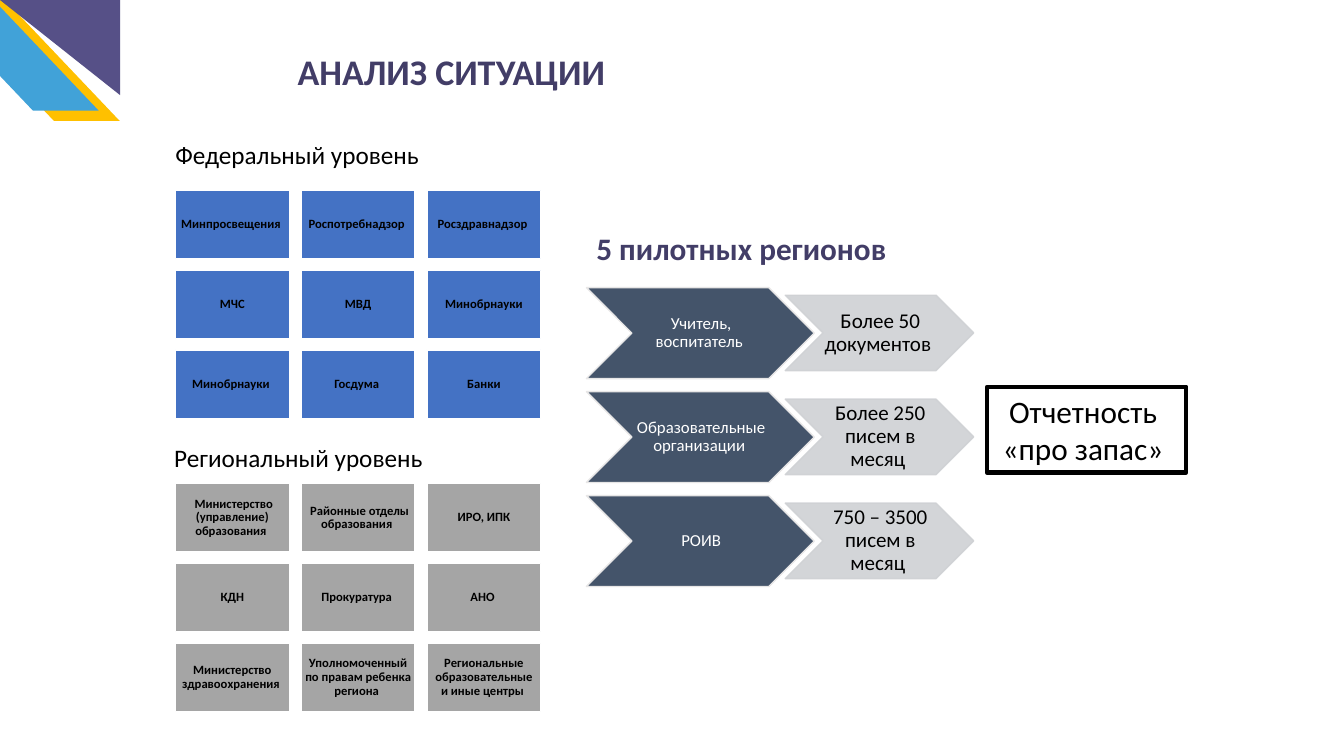
import pptx
import pptx.util
import pptx.dml.color
import pptx.enum.shapes
import pptx.enum.text
import pptx.oxml
import pptx.oxml.ns

Cm = pptx.util.Cm
Pt = pptx.util.Pt
RGBColor = pptx.dml.color.RGBColor
SHAPE = pptx.enum.shapes.MSO_SHAPE
ALIGN = pptx.enum.text.PP_ALIGN
ANCHOR = pptx.enum.text.MSO_ANCHOR
qn = pptx.oxml.ns.qn

FONT = "Calibri"
BLACK = RGBColor(0x00, 0x00, 0x00)
WHITE = RGBColor(0xFF, 0xFF, 0xFF)
PLUM = RGBColor(0x42, 0x3D, 0x67)
VIOLET = RGBColor(0x56, 0x50, 0x87)
AMBER = RGBColor(0xFF, 0xC0, 0x00)
SKY = RGBColor(0x41, 0xA2, 0xD8)
BLUE = RGBColor(0x44, 0x72, 0xC4)
GREY = RGBColor(0xA5, 0xA5, 0xA5)
SLATE = RGBColor(0x44, 0x54, 0x6A)
PALE = RGBColor(0xE7, 0xE6, 0xE6)
SILVER = RGBColor(0xCF, 0xD1, 0xD4)

FEDERAL = [
    ["Минпросвещения ", "Роспотребнадзор ", "Росздравнадзор "],
    ["МЧС", "МВД", "Минобрнауки"],
    ["Минобрнауки ", "Госдума ", "Банки"],
]
REGION = [
    [" Министерство (управление) образования ",
     " Районные отделы образования ", "ИРО, ИПК"],
    ["КДН", "Прокуратура ", "АНО "],
    ["Министерство здравоохранения ",
     "Уполномоченный по правам ребенка региона ",
     "Региональные образовательные и иные центры "],
]
LOADS = [
    ("Учитель, воспитатель ", "Более 50 документов "),
    ("Образовательные организации ", "Более 250 писем в месяц "),
    ("РОИВ", "750 – 3500 писем в месяц "),
]


def write(frame, lines, size, color=BLACK, bold=False, align=ALIGN.LEFT,
          pitch=1.0, anchor=ANCHOR.TOP, pads=(0.25, 0.13, 0.25, 0.13)):
    frame.word_wrap = True
    frame.auto_size = pptx.enum.text.MSO_AUTO_SIZE.NONE
    frame.vertical_anchor = anchor
    (frame.margin_left, frame.margin_top,
     frame.margin_right, frame.margin_bottom) = [Cm(pad) for pad in pads]
    for num, line in enumerate(lines):
        para = frame.add_paragraph() if num else frame.paragraphs[0]
        para.alignment = align
        para.line_spacing = pitch
        run = para.add_run()
        run.text = line
        run.font.name = FONT
        run.font.size = Pt(size)
        run.font.bold = bold
        run.font.color.rgb = color


def draw(slide, kind, place, fill=None, line=None, width=1):
    shape = slide.shapes.add_shape(kind, *[Cm(side) for side in place])
    shape.shadow.inherit = False
    if fill is None:
        shape.fill.background()
    else:
        shape.fill.solid()
        shape.fill.fore_color.rgb = fill
    if line is None:
        shape.line.fill.background()
    else:
        shape.line.color.rgb = line
        shape.line.width = Pt(width)
    return shape


def fade(shape, share):
    # Transparency of both fill and outline
    for color in shape.element.spPr.iter(qn("a:srgbClr")):
        alpha = pptx.oxml.parse_xml(
            '<a:alpha xmlns:a="http://schemas.openxmlformats.org/'
            f'drawingml/2006/main" val="{share * 1000}"/>')
        color.append(alpha)


def corner(slide):
    for left, top, fill in [(-1.63, -0.1, AMBER), (-2.16, -0.36, SKY)]:
        band = draw(slide, SHAPE.PARALLELOGRAM, (left, top, 4.65, 3.15), fill)
        band.adjustments[0] = 0.95
        band.element.spPr.find(qn("a:xfrm")).set("flipH", "1")
    wedge = draw(slide, SHAPE.RIGHT_TRIANGLE, (0, 0, 3.03, 2.4), VIOLET)
    wedge.rotation = 180


def label(slide, text, place, size, color=BLACK, bold=False):
    box = slide.shapes.add_textbox(*[Cm(side) for side in place])
    write(box.text_frame, [text], size, color, bold)


def grid(slide, rows, top, fill):
    for row, names in enumerate(rows):
        for col, name in enumerate(names):
            place = (4.42 + 3.17 * col, top + 2.01 * row, 2.87, 1.72)
            cell = draw(slide, SHAPE.RECTANGLE, place, fill, WHITE)
            write(cell.text_frame, [name], 9, bold=True, align=ALIGN.CENTER,
                  pitch=0.9, anchor=ANCHOR.MIDDLE, pads=(0.1,) * 4)


def arrow(slide, text, place, fill, line, size, color):
    shape = draw(slide, SHAPE.CHEVRON, place, fill, line)
    write(shape.text_frame, [text], size, color, align=ALIGN.CENTER,
          pitch=0.9, anchor=ANCHOR.MIDDLE, pads=(0.04, 0.02, 0, 0.02))
    return shape


def main():
    deck = pptx.Presentation()
    deck.slide_width, deck.slide_height = Cm(33.87), Cm(19.05)
    slide = deck.slides.add_slide(deck.slide_layouts[5])

    # Corner and title
    corner(slide)
    title = slide.shapes.title
    title.left, title.top = Cm(7.5), Cm(1.12)
    title.width, title.height = Cm(15.65), Cm(1.35)
    write(title.text_frame, ["АНАЛИЗ СИТУАЦИИ"], 25.7, PLUM, True,
          pads=(0, 0.13, 0.25, 0.13))

    # Levels of authority
    label(slide, "Федеральный уровень", (4.17, 3.38, 7.67, 1.02), 18)
    grid(slide, FEDERAL, 4.8, BLUE)
    label(slide, "Региональный уровень", (4.14, 11.02, 7.2, 1.02), 18)
    grid(slide, REGION, 12.19, GREY)

    # Pilot regions
    label(slide, "5 пилотных регионов", (14.78, 5.66, 8.3, 1.22), 22.3,
          PLUM, True)
    for row, (who, load) in enumerate(LOADS):
        top = 7.25 + 2.62 * row
        arrow(slide, who, (14.78, top, 5.74, 2.29), SLATE, PALE, 12, WHITE)
        tail = arrow(slide, load, (19.79, top + 0.19, 4.75, 1.9),
                     SILVER, SILVER, 15, BLACK)
        fade(tail, 90)

    # Outcome
    box = draw(slide, SHAPE.RECTANGLE, (24.87, 9.75, 5.03, 2.16),
               line=BLACK, width=3)
    write(box.text_frame, ["Отчетность ", "«про запас» "], 22.3,
          align=ALIGN.CENTER)

    deck.save("out.pptx")


if __name__ == "__main__":
    main()
